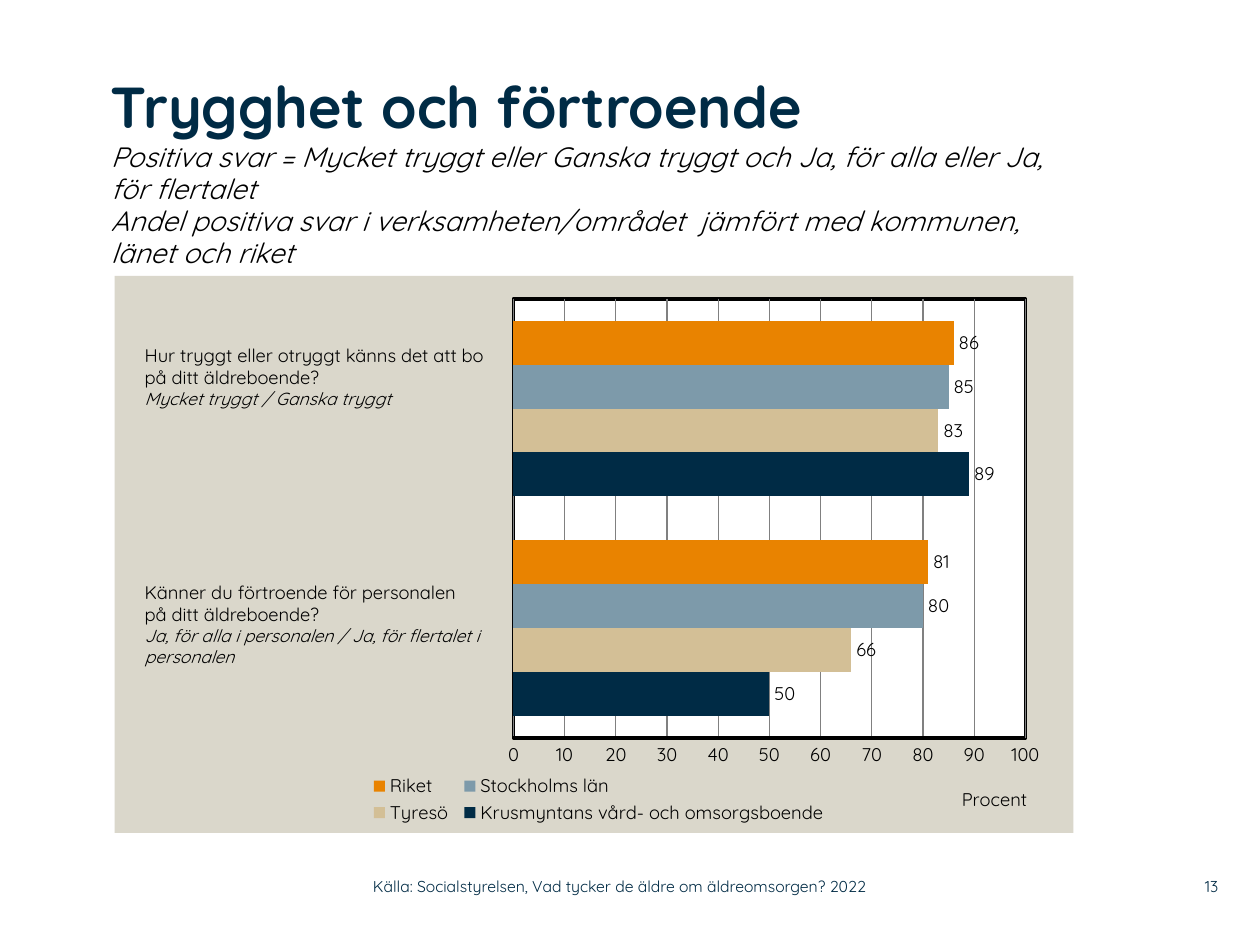
from lxml import etree
from pptx import Presentation
from pptx.chart.data import CategoryChartData
from pptx.dml.color import RGBColor
from pptx.enum.chart import XL_CHART_TYPE, XL_LABEL_POSITION, XL_LEGEND_POSITION, XL_TICK_MARK
from pptx.enum.text import MSO_ANCHOR, PP_ALIGN
from pptx.oxml import parse_xml
from pptx.oxml.ns import qn
from pptx.util import Inches, Pt

BAR = XL_CHART_TYPE.BAR_CLUSTERED
OUTSIDE_END = XL_LABEL_POSITION.OUTSIDE_END
BOTTOM = XL_LEGEND_POSITION.BOTTOM
NO_TICKS = XL_TICK_MARK.NONE
TOP, MIDDLE = MSO_ANCHOR.TOP, MSO_ANCHOR.MIDDLE
LEFT, RIGHT = PP_ALIGN.LEFT, PP_ALIGN.RIGHT


class Theme:
    font = "Quicksand"
    navy, black, white = "002B45", "000000", "FFFFFF"
    panel, grid = "DAD7CB", "808080"
    title, subtitle, body, answer, footer = 33, 16, 10.5, 10, 9


TITLE = "Trygghet och förtroende"
SUBTITLES = [
    "Positiva svar = Mycket tryggt eller Ganska tryggt och Ja, för alla eller Ja, för flertalet",
    "Andel positiva svar i verksamheten/området  jämfört med kommunen, länet och riket",
]
QUESTIONS = [
    ((1.05, 2.68, 2.98, 0.81),
     ["Hur tryggt eller otryggt känns det att bo på ditt äldreboende?"],
     "Mycket tryggt / Ganska tryggt"),
    ((1.05, 4.56, 3, 0.98),
     ["Känner du förtroende för personalen", "på ditt äldreboende?"],
     "Ja, för alla i personalen / Ja, för flertalet i personalen"),
]
FOOTERS = [
    ((2.96, 6.89, 4.43, 0.29), LEFT,
     "Källa: Socialstyrelsen, Vad tycker de äldre om äldreomsorgen? 2022"),
    ((9.2, 6.89, 0.47, 0.29), RIGHT, "13"),
]
CATEGORIES = ["1", "2"]
SERIES = [
    ("Krusmyntans vård- och omsorgsboende", (50, 89), Theme.navy),
    ("Tyresö", (66, 83), "D3BF96"),
    ("Stockholms län", (80, 85), "7D9AAA"),
    ("Riket", (81, 86), "E98300"),
]
AXIS_TITLE = "Procent"
# Positions as shares of the chart: left, top, width, height
PLOT_AREA = (0.416, 0.041, 0.534, 0.789)
LEGEND_AREA = (0.26, 0.89, 0.49, 0.1)
AXIS_TITLE_AREA = (0.88, 0.91)


def rgb(value):
    return RGBColor.from_string(value)


def style(font, size, color=Theme.black, bold=False, italic=False):
    font.name, font.size = Theme.font, Pt(size)
    font.color.rgb = rgb(color)
    font.bold, font.italic = bold, italic


def add_span(para, text, *args, **kwargs):
    span = para.add_run()
    span.text = text
    style(span.font, *args, **kwargs)


def add_box(page, place, anchor=TOP, inset=True):
    box = page.shapes.add_textbox(*map(Inches, place))
    frame = box.text_frame
    frame.word_wrap = True
    frame.vertical_anchor = anchor
    if not inset:
        frame.margin_left = frame.margin_right = 0
        frame.margin_top = frame.margin_bottom = 0
    return frame


def add_title(page):
    para = add_box(page, (0.88, 0.55, 7.75, 1.64), MIDDLE, inset=False).paragraphs[0]
    para.line_spacing = 0.96
    add_span(para, TITLE, Theme.title, Theme.navy, bold=True)
    for line in SUBTITLES:
        para.add_line_break()
        add_span(para, line, Theme.subtitle, italic=True)


def add_question(page, place, lines, answer):
    frame = add_box(page, place)
    for index, line in enumerate(lines):
        para = frame.add_paragraph() if index else frame.paragraphs[0]
        add_span(para, line, Theme.body)
    add_span(frame.add_paragraph(), answer, Theme.answer, italic=True)


def set_layout(parent, place, index, inner=False):
    """Place a chart part by hand; index is where the schema wants c:layout."""
    for old in parent.findall(qn("c:layout")):
        parent.remove(old)
    layout = etree.Element(qn("c:layout"))
    manual = etree.SubElement(layout, qn("c:manualLayout"))
    settings = [("layoutTarget", "inner")] if inner else []
    settings += [("xMode", "edge"), ("yMode", "edge")]
    settings += zip("xywh", place)
    for name, value in settings:
        etree.SubElement(manual, qn("c:" + name)).set("val", str(value))
    parent.insert(index, layout)


def shape_properties(fill, line=""):
    return parse_xml(
        '<c:spPr xmlns:c="http://schemas.openxmlformats.org/drawingml/2006/chart" '
        'xmlns:a="http://schemas.openxmlformats.org/drawingml/2006/main">'
        f'<a:solidFill><a:srgbClr val="{fill}"/></a:solidFill>'
        f'<a:ln w="{Pt(2)}">{line or "<a:noFill/>"}</a:ln></c:spPr>')


def add_chart(page):
    data = CategoryChartData()
    data.categories = CATEGORIES
    for name, values, _ in SERIES:
        data.add_series(name, values)
    place = map(Inches, (0.91, 2.19, 7.61, 4.42))
    chart = page.shapes.add_chart(BAR, *place, data).chart
    style(chart.font, Theme.body)
    chart.has_title = False

    plot = chart.plots[0]
    plot.gap_width, plot.overlap = 100, 0
    plot.vary_by_categories = False
    for series, (_, _, color) in zip(plot.series, SERIES):
        series.format.fill.solid()
        series.format.fill.fore_color.rgb = rgb(color)
        labels = series.data_labels
        labels.show_value, labels.position = True, OUTSIDE_END
        style(labels.font, Theme.body)

    chart.category_axis.visible = False
    axis = chart.value_axis
    axis.minimum_scale, axis.maximum_scale, axis.major_unit = 0, 100, 10
    axis.major_tick_mark = axis.minor_tick_mark = NO_TICKS
    style(axis.tick_labels.font, Theme.body)
    axis.has_major_gridlines = True
    for line, color, width in ((axis.format.line, Theme.black, 2),
                               (axis.major_gridlines.format.line, Theme.grid, 0.75)):
        line.color.rgb, line.width = rgb(color), Pt(width)
    title = axis.axis_title
    add_span(title.text_frame.paragraphs[0], AXIS_TITLE, Theme.body)

    chart.has_legend = True
    legend = chart.legend
    legend.position, legend.include_in_layout = BOTTOM, False
    style(legend.font, Theme.body)

    space = chart.plots[0]._element.getparent().getparent().getparent()
    area = space.find(qn("c:chart")).find(qn("c:plotArea"))
    set_layout(area, PLOT_AREA, 0, inner=True)
    set_layout(title._element, AXIS_TITLE_AREA, 1)
    set_layout(legend._element, LEGEND_AREA, 1)
    border = f'<a:solidFill><a:srgbClr val="{Theme.black}"/></a:solidFill>'
    area.append(shape_properties(Theme.white, border))
    space.find(qn("c:chart")).addnext(shape_properties(Theme.panel))


def main():
    deck = Presentation()
    deck.slide_width, deck.slide_height = Inches(10), Inches(7.5)
    page = deck.slides.add_slide(deck.slide_layouts[6])
    add_title(page)
    add_chart(page)
    for question in QUESTIONS:
        add_question(page, *question)
    for place, alignment, text in FOOTERS:
        para = add_box(page, place, MIDDLE, inset=False).paragraphs[0]
        para.alignment = alignment
        add_span(para, text, Theme.footer, Theme.navy)
    deck.save("out.pptx")


if __name__ == "__main__":
    main()
